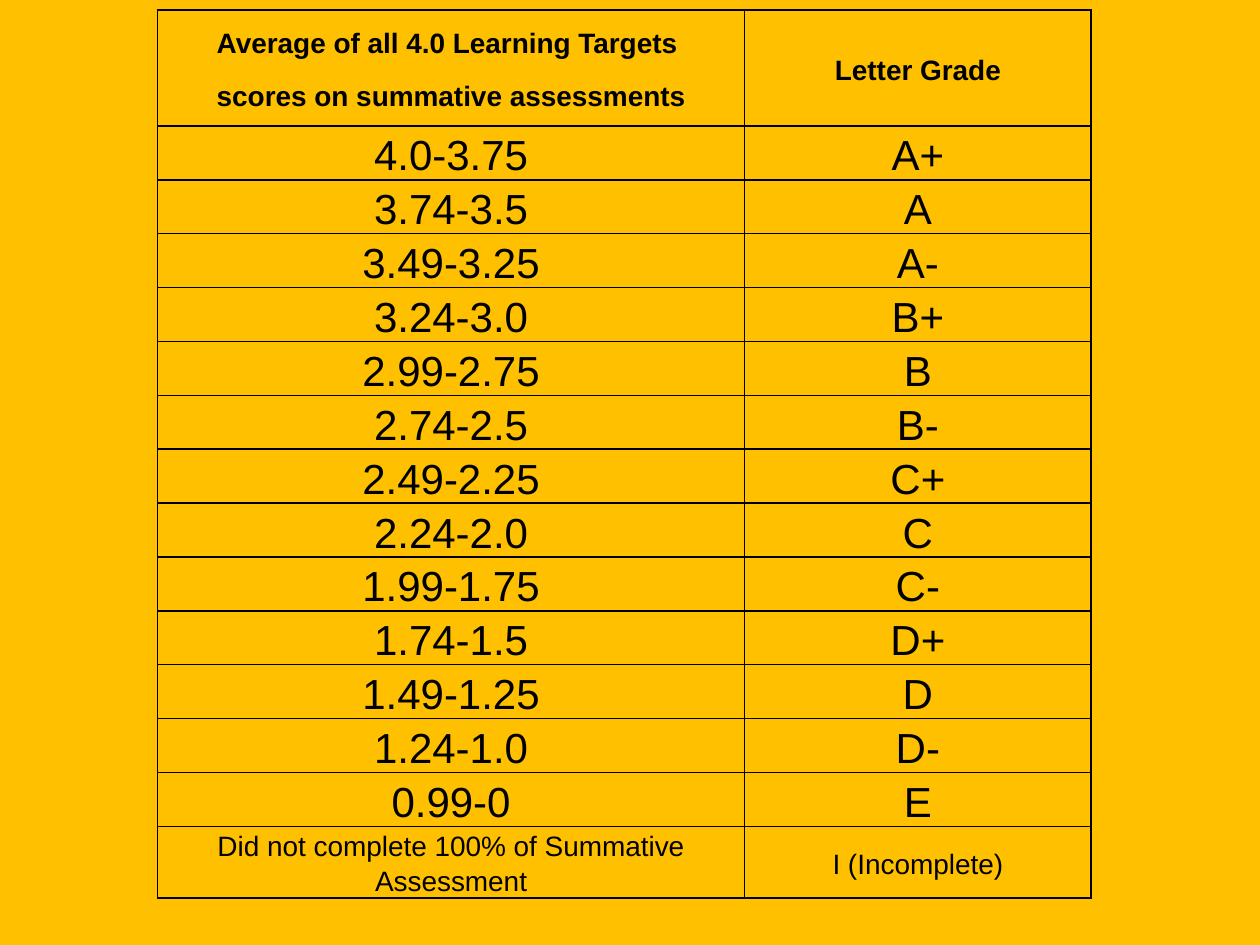
"""Build a slide that converts average scores to letter grades."""
from dataclasses import dataclass

from lxml import etree
from pptx import Presentation
from pptx import util as u
from pptx.dml.color import RGBColor
from pptx.enum import text
from pptx.oxml import ns


@dataclass(frozen=True)
class Theme:
    """Colours, type sizes and spacing of the slide."""
    background: str = "FFC000"
    ink: str = "000000"
    font: str = "Arial"
    small: int = 16
    large: int = 24
    line_spacing: float = 1.15
    space_after: int = 10
    border: int = 1
    side_margin: float = 0.07


THEME = Theme()
HEADINGS = (
    "Average of all 4.0 Learning Targets \nscores on summative assessments",
    "Letter Grade",
)
GRADES = (
    ("4.0-3.75", "A+"), ("3.74-3.5", "A"), ("3.49-3.25", "A-"),
    ("3.24-3.0", "B+"), ("2.99-2.75", "B"), ("2.74-2.5", "B-"),
    ("2.49-2.25", "C+"), ("2.24-2.0", "C"), ("1.99-1.75", "C-"),
    ("1.74-1.5", "D+"), ("1.49-1.25", "D"), ("1.24-1.0", "D-"),
    ("0.99-0", "E"),
)
INCOMPLETE = ("Did not complete 100% of Summative Assessment", "I (Incomplete)")
COLUMN_WIDTHS = (4.66, 2.75)
HEADING_HEIGHT, GRADE_HEIGHT = 0.92, 0.4


def add_borders(cell):
    """Draw a thin line on all four sides of a cell."""
    properties = cell._tc.get_or_add_tcPr()
    for position, side in enumerate(("lnL", "lnR", "lnT", "lnB")):
        line = etree.Element(ns.qn(f"a:{side}"), w=str(u.Pt(THEME.border)))
        fill = etree.SubElement(line, ns.qn("a:solidFill"))
        etree.SubElement(fill, ns.qn("a:srgbClr"), val=THEME.ink)
        properties.insert(position, line)


def fill_cell(cell, wording, size, bold):
    """Write and format one table cell."""
    cell.fill.background()
    add_borders(cell)
    cell.vertical_anchor = text.MSO_ANCHOR.MIDDLE
    cell.margin_left = cell.margin_right = u.Inches(THEME.side_margin)
    cell.margin_top = cell.margin_bottom = 0
    cell.text_frame.text = wording
    for paragraph in cell.text_frame.paragraphs:
        paragraph.alignment = text.PP_ALIGN.CENTER
        paragraph.line_spacing = THEME.line_spacing
        paragraph.space_after = u.Pt(THEME.space_after)
        for run in paragraph.runs:
            run.font.name = THEME.font
            run.font.size = u.Pt(size)
            run.font.bold = bold
            run.font.color.rgb = RGBColor.from_string(THEME.ink)


def add_grade_table(slide, left, top, width, height):
    """Place the grade scale in the given box."""
    rows = [(HEADINGS, THEME.small, True)]
    rows += [(grade, THEME.large, False) for grade in GRADES]
    rows.append((INCOMPLETE, THEME.small, False))
    scale = slide.shapes.add_table(
        len(rows), len(COLUMN_WIDTHS), left, top, width, height).table
    scale.first_row = scale.horz_banding = False
    for column, share in zip(scale.columns, COLUMN_WIDTHS):
        column.width = int(width * share / sum(COLUMN_WIDTHS))
    for index, (wordings, size, bold) in enumerate(rows):
        scale.rows[index].height = u.Inches(GRADE_HEIGHT if index else HEADING_HEIGHT)
        for column, wording in enumerate(wordings):
            fill_cell(scale.cell(index, column), wording, size, bold)


def main():
    """Create and save the presentation."""
    deck = Presentation()
    deck.slide_width, deck.slide_height = u.Inches(10), u.Inches(7.5)
    slide = deck.slides.add_slide(deck.slide_layouts[6])
    slide.background.fill.solid()
    slide.background.fill.fore_color.rgb = RGBColor.from_string(THEME.background)
    height = HEADING_HEIGHT + GRADE_HEIGHT * (len(GRADES) + 1)
    add_grade_table(slide, u.Inches(1.25), u.Inches(0.08),
                    u.Inches(sum(COLUMN_WIDTHS)), u.Inches(height))
    deck.save("out.pptx")


if __name__ == "__main__":
    main()
